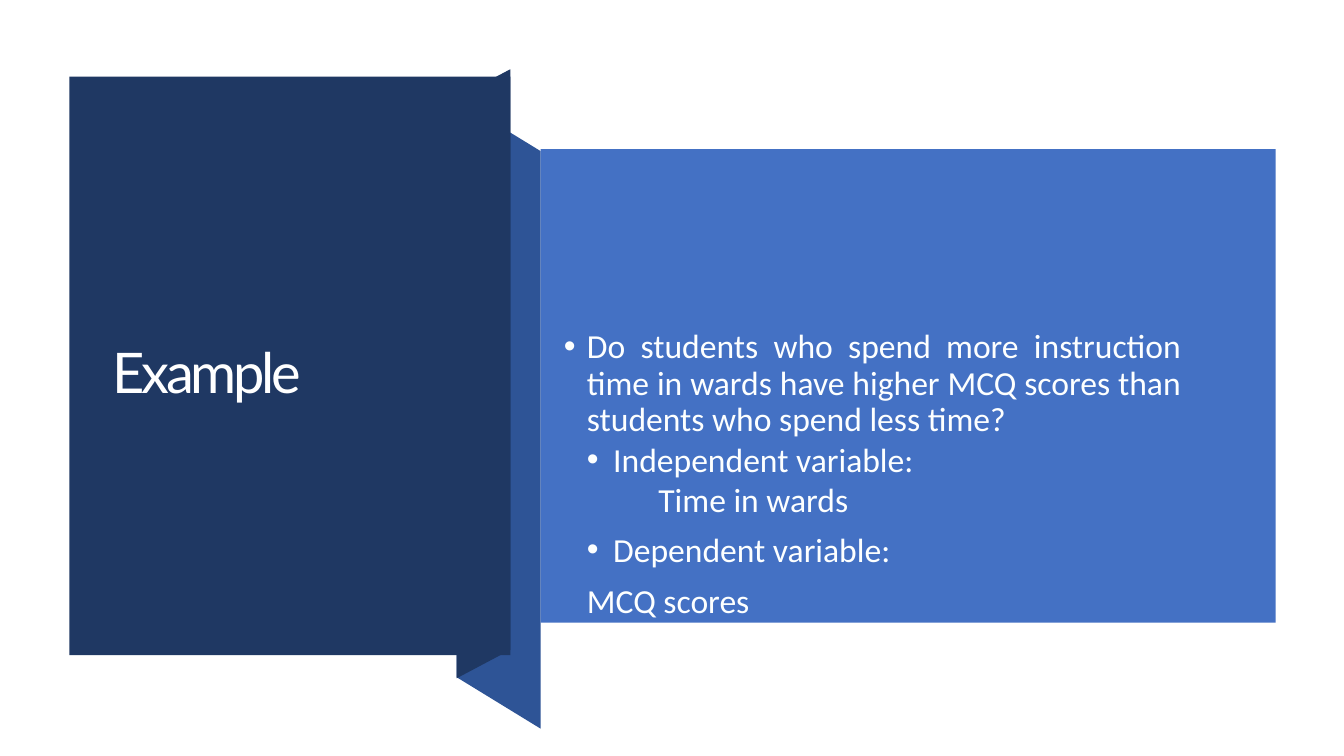
from lxml.etree import SubElement
from pptx import Presentation
from pptx.dml.color import RGBColor
from pptx.enum.shapes import MSO_SHAPE
from pptx.enum.text import MSO_ANCHOR, MSO_AUTO_SIZE, PP_ALIGN
from pptx.oxml.ns import qn
from pptx.util import Pt

PX = 9525
COLORS = {
    "navy": "1F3863",
    "ribbon": "2E5496",
    "blue": "4471C4",
    "title": "FFFFFF",
    "body": "FDFFFF",
}
QUESTION = (
    "Do students who spend more instruction time in wards have higher "
    "MCQ scores than students who spend less time?"
)
BODY_LINES = [
    (QUESTION, 44, -22, True, 0, 0.9),
    ("Independent variable:", 69, -25, True, 0, 1.0),
    ("Time in wards", 112, 0, False, 0, 1.0),
    ("Dependent variable:", 69, -25, True, 7.2, 1.0),
    ("MCQ scores", 44, 0, False, 7.2, 1.0),
]


def color(name):
    return RGBColor.from_string(COLORS[name])


def paint(shape, name):
    shape.fill.solid()
    shape.fill.fore_color.rgb = color(name)
    shape.line.fill.background()


def place(shape, box):
    shape.left, shape.top, shape.width, shape.height = (v * PX for v in box)


def set_frame(frame, left, top, right, anchor):
    frame.word_wrap = True
    frame.auto_size = MSO_AUTO_SIZE.NONE
    frame.vertical_anchor = anchor
    frame.margin_left = left * PX
    frame.margin_top = top * PX
    frame.margin_right = right * PX
    frame.margin_bottom = 0


def format_runs(paragraph, font_name, size, color_name):
    for run in paragraph.runs:
        run.font.name = font_name
        run.font.size = Pt(size)
        run.font.color.rgb = color(color_name)


def set_indent(paragraph, margin, indent, bullet):
    properties = paragraph._p.get_or_add_pPr()
    properties.set("marL", str(margin * PX))
    properties.set("indent", str(indent * PX))
    if bullet:
        SubElement(properties, qn("a:buFont")).set("typeface", "Arial")
        SubElement(properties, qn("a:buChar")).set("char", "•")
    else:
        SubElement(properties, qn("a:buNone"))


def add_band(slide, box, left_drop, right_drop, name):
    left, top, width, height = box
    right, bottom = left + width, top + height
    slant = abs(left_drop - right_drop)
    builder = slide.shapes.build_freeform(left, top + left_drop, scale=PX)
    builder.add_line_segments([
        (left, bottom - slant + left_drop),
        (right, bottom - slant + right_drop),
        (right, top + right_drop),
    ], close=True)
    band = builder.convert_to_shape()
    band.shadow.inherit = False
    paint(band, name)


def add_ribbon(slide, box):
    left, top, width, height = box
    add_band(slide, (left, top + 29, width, height - 29), 0, 49, "ribbon")
    add_band(slide, (left, top, 51, 580), 27, 0, "navy")


def add_title_panel(slide, box):
    title = slide.shapes.title
    title.element.getparent().append(title.element)
    place(title, box)
    paint(title, "navy")
    frame = title.text_frame
    frame.text = "Example"
    set_frame(frame, 41, 10, 0, MSO_ANCHOR.MIDDLE)
    paragraph = frame.paragraphs[0]
    paragraph.alignment = PP_ALIGN.LEFT
    paragraph.line_spacing = 1.0
    format_runs(paragraph, "Lato", 40, "title")
    paragraph.runs[0]._r.get_or_add_rPr().set("spc", "-230")


def add_body_panel(slide, box):
    panel = slide.shapes.add_shape(MSO_SHAPE.RECTANGLE, *(v * PX for v in box))
    panel.shadow.inherit = False
    paint(panel, "blue")
    frame = panel.text_frame
    set_frame(frame, 0, 172, 90, MSO_ANCHOR.TOP)
    for index, line in enumerate(BODY_LINES):
        text, margin, indent, bullet, space_before, spacing = line
        paragraph = frame.add_paragraph() if index else frame.paragraphs[0]
        paragraph.text = text
        paragraph.alignment = PP_ALIGN.JUSTIFY
        paragraph.line_spacing = spacing
        paragraph.space_before = Pt(space_before)
        set_indent(paragraph, margin, indent, bullet)
        format_runs(paragraph, "Calibri", 24, "body")


def main():
    presentation = Presentation()
    presentation.slide_width = 1280 * PX
    presentation.slide_height = 720 * PX
    slide = presentation.slides.add_slide(presentation.slide_layouts[5])
    add_ribbon(slide, (435, 66, 80, 628))
    add_title_panel(slide, (66, 73, 420, 551))
    add_body_panel(slide, (515, 142, 700, 451))
    presentation.save("out.pptx")


if __name__ == "__main__":
    main()
